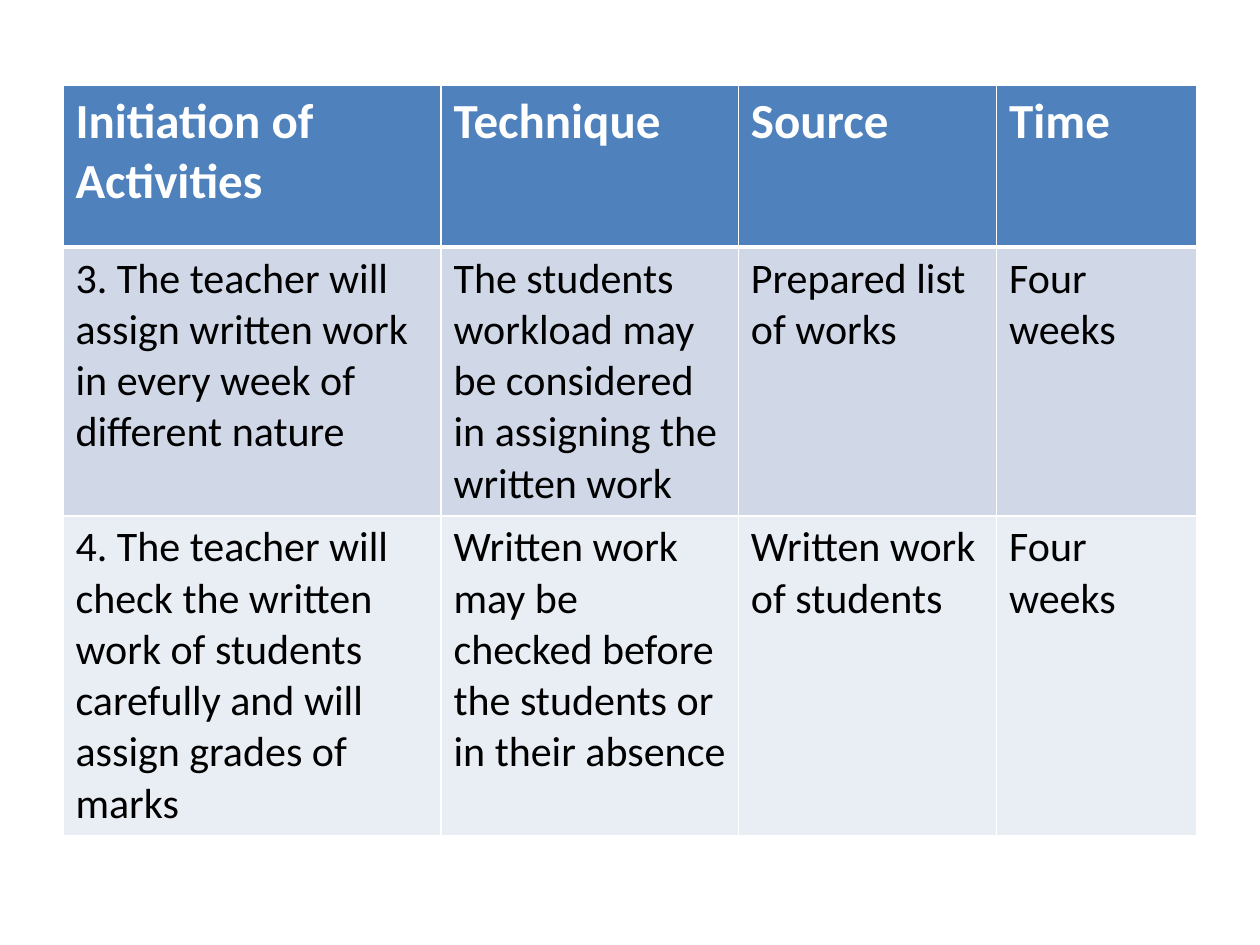
from lxml.etree import SubElement
from pptx import Presentation
from pptx.dml.color import RGBColor
from pptx.oxml.ns import qn
from pptx.util import Inches, Pt

HEADINGS = ["Initiation of Activities", "Technique", "Source", "Time"]
ACTIVITIES = [
    ["3. The teacher will assign written work in every week of different nature",
     "The students workload may be considered in assigning the written work",
     "Prepared list of works",
     "Four weeks"],
    ["4. The teacher will check the written work of students carefully and will assign grades of marks",
     "Written work may be checked before the students or in their absence",
     "Written work of students",
     "Four weeks"],
]
COLUMN_WIDTHS = [3, 2.36, 2.05, 1.59]
ROW_HEIGHTS = [1.28, 1.98, 2.35]
ROW_FILLS = ["4F81BD", "D0D8E8", "E9EDF4"]
LEFT, TOP = 0.5, 0.68
RULE, HEADER_RULE = 1, 3


def rgb(value):
    return RGBColor.from_string(value)


def write(frame, text, size=24, color="000000", bold=False, font="Calibri"):
    run = frame.paragraphs[0].add_run()
    run.text = text
    run.font.name = font
    run.font.size = Pt(size)
    run.font.bold = bold
    run.font.color.rgb = rgb(color)


def rule_cell(cell, top, bottom, color="FFFFFF"):
    properties = cell._tc.get_or_add_tcPr()
    for side, width in zip("LRTB", (RULE, RULE, top, bottom)):
        edge = SubElement(properties, qn(f"a:ln{side}"), w=str(Pt(width)))
        SubElement(SubElement(edge, qn("a:solidFill")), qn("a:srgbClr"), val=color)


def main():
    deck = Presentation()
    deck.slide_width, deck.slide_height = Inches(10), Inches(7.5)
    slide = deck.slides.add_slide(deck.slide_layouts[6])

    rows = [HEADINGS] + ACTIVITIES
    plan = slide.shapes.add_table(
        len(rows), len(HEADINGS), Inches(LEFT), Inches(TOP),
        Inches(sum(COLUMN_WIDTHS)), Inches(sum(ROW_HEIGHTS))).table
    for column, width in zip(plan.columns, COLUMN_WIDTHS):
        column.width = Inches(width)

    for r, (texts, height, fill) in enumerate(zip(rows, ROW_HEIGHTS, ROW_FILLS)):
        plan.rows[r].height = Inches(height)
        style = dict(size=28, color="FFFFFF", bold=True) if r == 0 else {}
        for c, text in enumerate(texts):
            cell = plan.cell(r, c)
            rule_cell(cell, top=HEADER_RULE if r == 1 else RULE,
                      bottom=HEADER_RULE if r == 0 else RULE)
            cell.fill.solid()
            cell.fill.fore_color.rgb = rgb(fill)
            write(cell.text_frame, text, **style)

    deck.save("out.pptx")


if __name__ == "__main__":
    main()
